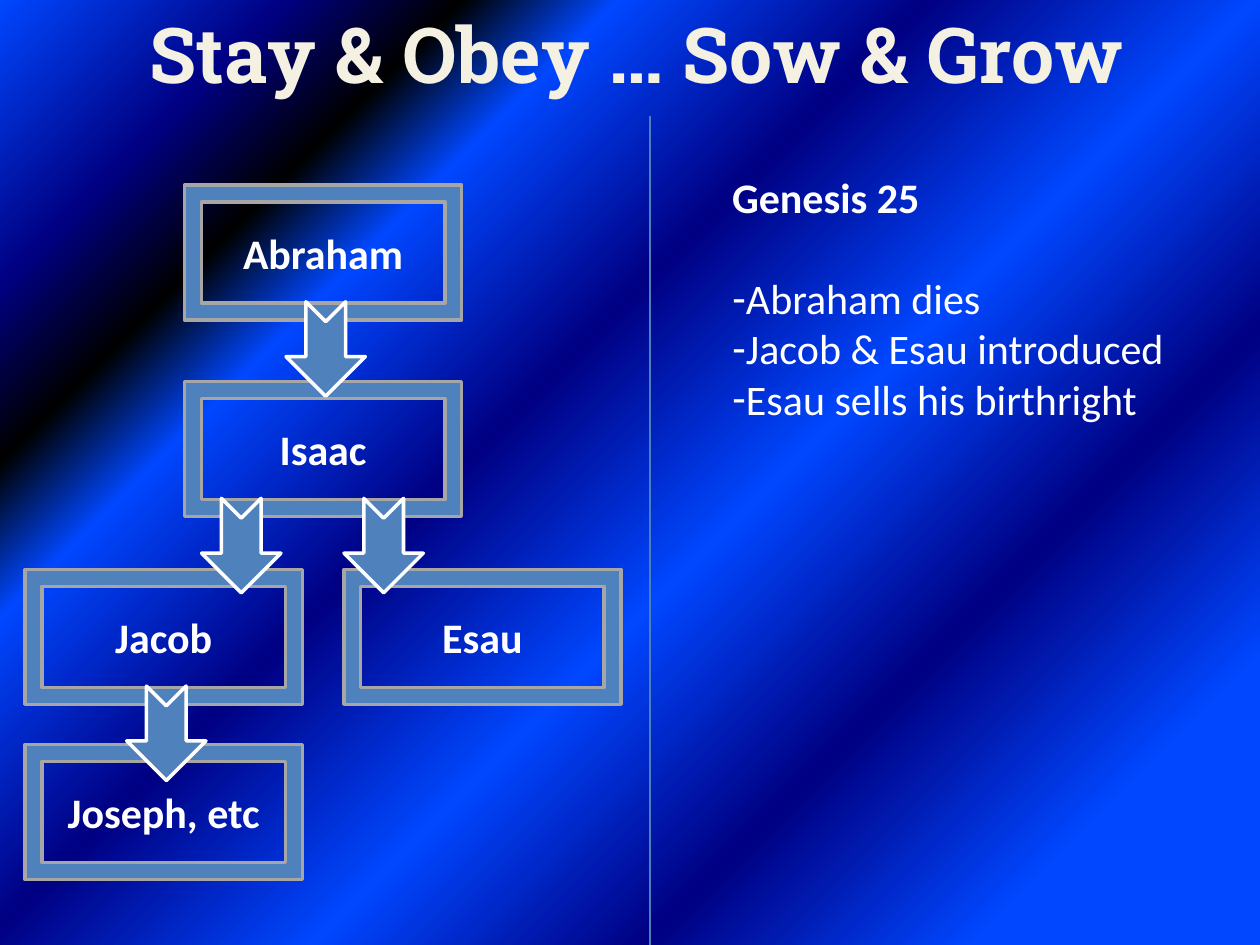
"""Build a slide with a family tree on the left and chapter notes on the right."""
from dataclasses import dataclass

from lxml import etree
from pptx import Presentation
from pptx.dml.color import RGBColor
from pptx.enum.shapes import MSO_CONNECTOR, MSO_SHAPE
from pptx.enum.text import MSO_ANCHOR, MSO_AUTO_SIZE, PP_ALIGN
from pptx.oxml.ns import qn
from pptx.util import Inches, Pt

FRAME, ARROW = MSO_SHAPE.FRAME, MSO_SHAPE.NOTCHED_RIGHT_ARROW
STRAIGHT = MSO_CONNECTOR.STRAIGHT
TOP, MIDDLE = MSO_ANCHOR.TOP, MSO_ANCHOR.MIDDLE
LEFT, CENTER = PP_ALIGN.LEFT, PP_ALIGN.CENTER
GROW = MSO_AUTO_SIZE.SHAPE_TO_FIT_TEXT

COLORS = {
    "title": "F4F1E3", "title outline": "054697", "text": "FFFFFF",
    "fill": "4F81BD", "frame line": "A6A6A6", "arrow line": "FFFFFF",
    "divider": "4B7EBC", "bright": "0047FF", "navy": "000082", "black": "000000",
}
GRADIENT = [(13, "bright"), (28, "navy"), (43, "bright"), (58, "navy"),
            (72, "bright"), (79, "black"), (87, "navy"), (100, "bright")]
TITLE_FONT = {"name": "Roboto Slab", "size": Pt(44), "bold": True}
BOLD_FONT = {"name": "Calibri", "size": Pt(24), "bold": True}
PLAIN_FONT = {**BOLD_FONT, "bold": False}

SLIDE_WIDTH, SLIDE_HEIGHT = 10, 7.5
COLUMN_START, COLUMN_STEP = 0.2, 1.265
ROW_TOPS = (1.47, 3.03, 4.52, 5.91)
FRAME_WIDTH, FRAME_HEIGHT = 2.2, 1.07
ARROW_LENGTH, ARROW_BREADTH, ARROW_DROP = 0.75, 0.63, 1.3
DIVIDER_X, DIVIDER_TOP = 0.516 * SLIDE_WIDTH, 0.92


@dataclass(frozen=True)
class Person:
    """A framed name at a grid place, with the centre offsets of its arrows."""
    name: str
    column: int
    row: int
    arrows: tuple = ()


FAMILY = (
    Person("Abraham", 1, 0, (0.02,)),
    Person("Isaac", 1, 1, (-0.65, 0.48)),
    Person("Jacob", 0, 2, (0.02,)),
    Person("Esau", 2, 2),
    Person("Joseph, etc", 0, 3),
)
HEADING = "Genesis 25"
EVENTS = ("Abraham dies", "Jacob & Esau introduced", "Esau sells his birthright")


def set_values(target, values: dict) -> None:
    """Set every named attribute on the target."""
    for name, value in values.items():
        setattr(target, name, value)


def place(shape, left: float, top: float, width: float, height: float) -> None:
    """Move and size a shape in inches."""
    set_values(shape, {"left": Inches(left), "top": Inches(top),
                       "width": Inches(width), "height": Inches(height)})


def color(name: str) -> RGBColor:
    """Return a named colour."""
    return RGBColor.from_string(COLORS[name])


def add_color(parent, name: str) -> None:
    """Append a named colour element."""
    etree.SubElement(parent, qn("a:srgbClr"), val=COLORS[name])


def write(paragraph, text: str, font: dict, color_name: str, alignment=CENTER):
    """Add one formatted run to a paragraph and return it."""
    paragraph.alignment = alignment
    run = paragraph.add_run()
    run.text = text
    set_values(run.font, font)
    run.font.color.rgb = color(color_name)
    return run


def paint_background(slide) -> None:
    """Fill the background with a gradient spreading from the lower right corner."""
    slide.background.fill.gradient()
    gradient = slide.element.find(".//" + qn("a:gradFill"))
    for child in list(gradient):
        gradient.remove(child)
    stops = etree.SubElement(gradient, qn("a:gsLst"))
    for percent, name in GRADIENT:
        add_color(etree.SubElement(stops, qn("a:gs"), pos=str(percent * 1000)), name)
    circle = etree.SubElement(gradient, qn("a:path"))
    circle.set("path", "circle")
    etree.SubElement(circle, qn("a:fillToRect"), l="100000", t="100000")


def write_title(title) -> None:
    """Fill and format the title placeholder."""
    place(title, 0.54, 0, 9.03, 0.84)
    frame = title.text_frame
    set_values(frame, {"word_wrap": False, "auto_size": GROW, "vertical_anchor": TOP})
    run = write(frame.paragraphs[0], "Stay & Obey … Sow & Grow", TITLE_FONT, "title")
    outline = etree.Element(qn("a:ln"), w=str(Pt(1)))
    add_color(etree.SubElement(outline, qn("a:solidFill")), "title outline")
    run.font._element.insert(0, outline)


def write_notes(body) -> None:
    """Fill the body placeholder with a heading and a dashed list."""
    place(body, 5.71, 1.31, 3.7, 2.93)
    frame = body.text_frame
    set_values(frame, {"word_wrap": True, "auto_size": GROW, "vertical_anchor": TOP})
    for index, text in enumerate((HEADING, *EVENTS)):
        paragraph = frame.add_paragraph() if index else frame.paragraphs[0]
        write(paragraph, text, PLAIN_FONT if index else BOLD_FONT, "text", LEFT)
        paragraph.space_before = Pt(29 if index == 1 else 0)
        properties = paragraph._p.get_or_add_pPr()
        set_bullet = {"marL": "0", "indent": "0"}
        for name, value in set_bullet.items():
            properties.set(name, value)
        if index:
            etree.SubElement(properties, qn("a:buChar"), char="-")
        else:
            etree.SubElement(properties, qn("a:buNone"))


def add_block(slide, kind, box: tuple, line_name: str):
    """Add a filled preset shape with a two-point line."""
    shape = slide.shapes.add_shape(kind, *(Inches(value) for value in box))
    shape.shadow.inherit = False
    shape.fill.solid()
    shape.fill.fore_color.rgb = color("fill")
    shape.line.color.rgb = color(line_name)
    shape.line.width = Pt(2)
    return shape


def frame_left(person: Person) -> float:
    """Return the left edge of a person's frame."""
    return COLUMN_START + person.column * COLUMN_STEP


def add_person(slide, person: Person) -> None:
    """Add a person's frame with the name inside."""
    box = (frame_left(person), ROW_TOPS[person.row], FRAME_WIDTH, FRAME_HEIGHT)
    shape = add_block(slide, FRAME, box, "frame line")
    shape.text_frame.vertical_anchor = MIDDLE
    write(shape.text_frame.paragraphs[0], person.name, BOLD_FONT, "text")


def add_arrows(slide, person: Person) -> None:
    """Add the downward arrows leaving a person's frame."""
    for offset in person.arrows:
        center_x = frame_left(person) + FRAME_WIDTH / 2 + offset
        center_y = ROW_TOPS[person.row] + ARROW_DROP
        box = (center_x - ARROW_LENGTH / 2, center_y - ARROW_BREADTH / 2,
               ARROW_LENGTH, ARROW_BREADTH)
        add_block(slide, ARROW, box, "arrow line").rotation = 90


def add_divider(slide) -> None:
    """Add the thin vertical line between tree and notes."""
    x = Inches(DIVIDER_X)
    line = slide.shapes.add_connector(
        STRAIGHT, x, Inches(DIVIDER_TOP), x, Inches(SLIDE_HEIGHT))
    line.line.color.rgb = color("divider")
    line.line.width = Pt(0.75)
    etree.SubElement(line._element.spPr, qn("a:effectLst"))


def main() -> None:
    """Build and save the presentation."""
    presentation = Presentation()
    set_values(presentation, {"slide_width": Inches(SLIDE_WIDTH),
                              "slide_height": Inches(SLIDE_HEIGHT)})
    slide = presentation.slides.add_slide(presentation.slide_layouts[1])
    paint_background(slide)
    write_title(slide.shapes.title)
    write_notes(slide.placeholders[1])
    for draw in (add_person, add_arrows):
        for person in FAMILY:
            draw(slide, person)
    add_divider(slide)
    presentation.save("out.pptx")


if __name__ == "__main__":
    main()
